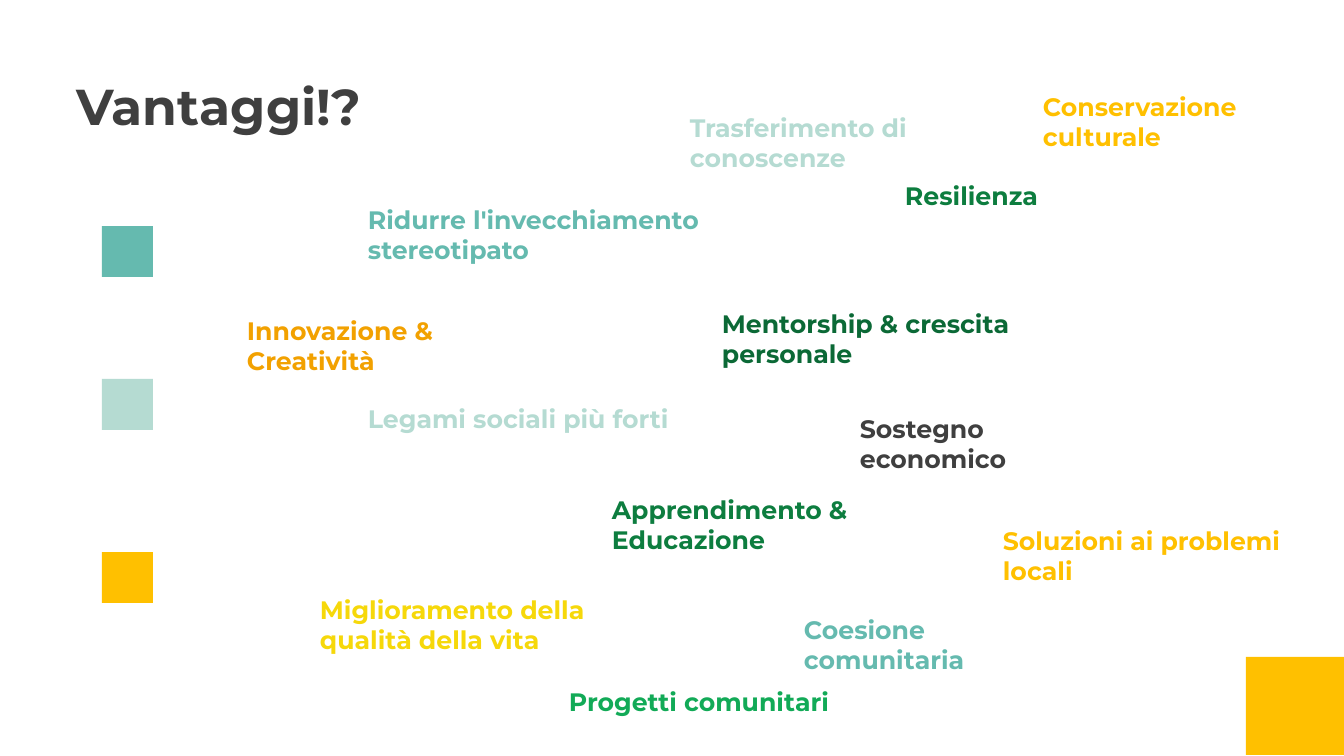
from pptx import Presentation
from pptx import util as u
from pptx.dml.color import RGBColor
from pptx.enum import shapes, text

PX = 914400 / 100.8  # EMU in one px

CHARCOAL = RGBColor(0x3F, 0x3F, 0x3F)
TEAL = RGBColor(0x65, 0xBA, 0xAF)
MINT = RGBColor(0xB5, 0xDB, 0xD2)
GOLD = RGBColor(0xFF, 0xC0, 0x00)
ORANGE = RGBColor(0xF2, 0xA1, 0x00)
YELLOW = RGBColor(0xF6, 0xD8, 0x0A)
FOREST = RGBColor(0x0B, 0x69, 0x36)
GREEN = RGBColor(0x0D, 0x7D, 0x3F)
EMERALD = RGBColor(0x12, 0xAA, 0x57)

deck = Presentation()
deck.slide_width, deck.slide_height = u.Emu(round(1344 * PX)), u.Emu(round(756 * PX))
page = deck.slides.add_slide(deck.slide_layouts[6])


def emu(*lengths):
    return [u.Emu(round(length * PX)) for length in lengths]


def add_text(words, left, top, width, height=40, size=18, color=CHARCOAL):
    box = page.shapes.add_textbox(*emu(left, top, width, height))
    box.text_frame.word_wrap = True
    box.text_frame.auto_size = text.MSO_AUTO_SIZE.SHAPE_TO_FIT_TEXT
    span = box.text_frame.paragraphs[0].add_run()
    span.text = words
    span.font.name = "Montserrat"
    span.font.size = u.Pt(size)
    span.font.bold = True
    span.font.color.rgb = color


# Title
add_text("Vantaggi!?", 67, 70, 487, height=72, size=36)

# Squares down the left side and in the corner
for left, top, side, color in [
    (102, 226, 51, TEAL),
    (102, 379, 51, MINT),
    (102, 552, 51, GOLD),
    (1246, 657, 98, GOLD),
]:
    square = page.shapes.add_shape(shapes.MSO_SHAPE.RECTANGLE, *emu(left, top, side, side))
    square.shadow.inherit = False
    square.fill.solid()
    square.fill.fore_color.rgb = color
    square.line.fill.background()

# Scattered benefits
for words, left, top, width, color in [
    ("Trasferimento di conoscenze", 680, 107, 285, MINT),
    ("Mentorship & crescita personale", 712, 303, 423, FOREST),
    ("Ridurre l'invecchiamento stereotipato", 358, 199, 406, TEAL),
    ("Legami sociali più forti", 358, 398, 387, MINT),
    ("Coesione comunitaria", 794, 609, 300, TEAL),
    ("Innovazione & Creatività", 237, 310, 321, ORANGE),
    ("Sostegno economico", 850, 408, 265, CHARCOAL),
    ("Miglioramento della qualità della vita", 310, 589, 343, YELLOW),
    ("Resilienza", 895, 175, 156, GREEN),
    ("Conservazione culturale", 1033, 86, 298, GOLD),
    ("Soluzioni ai problemi locali", 993, 520, 341, GOLD),
    ("Apprendimento & Educazione", 602, 489, 303, GREEN),
    ("Progetti comunitari", 559, 681, 291, EMERALD),
]:
    add_text(words, left, top, width, color=color)

deck.save("out.pptx")
